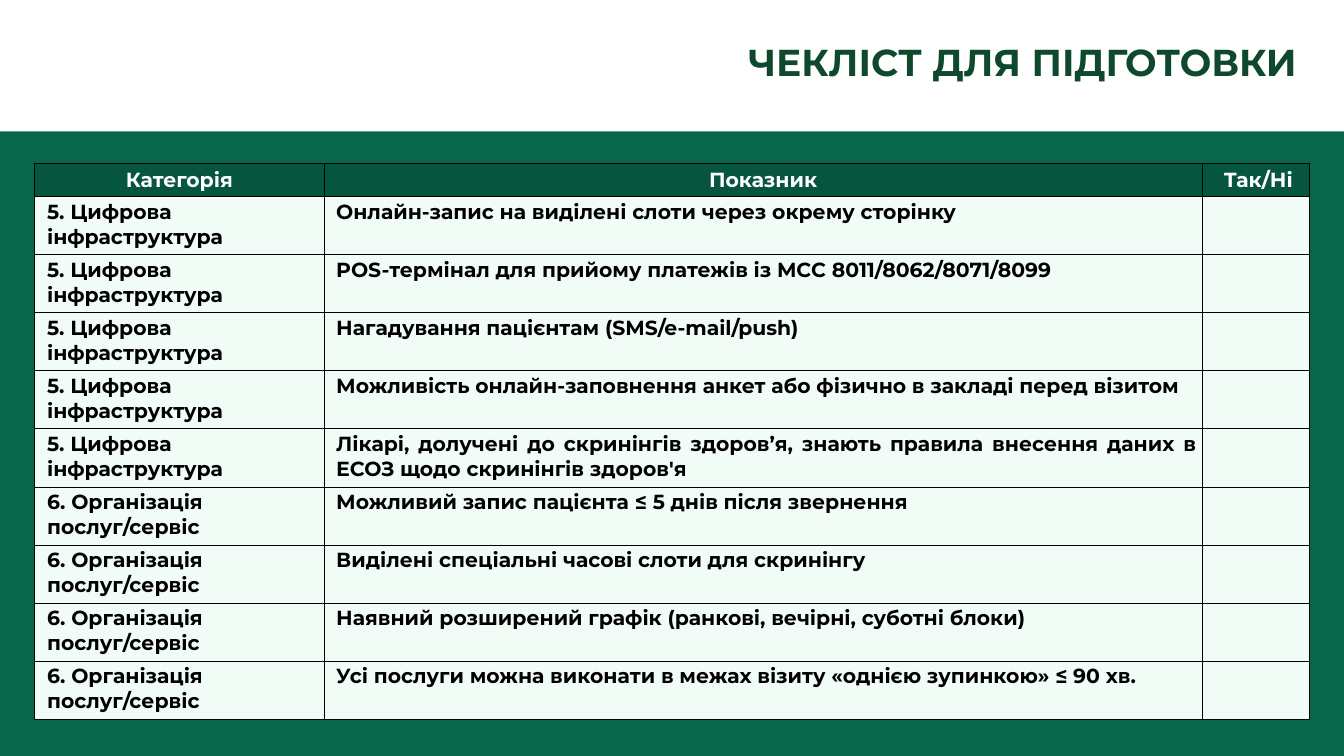
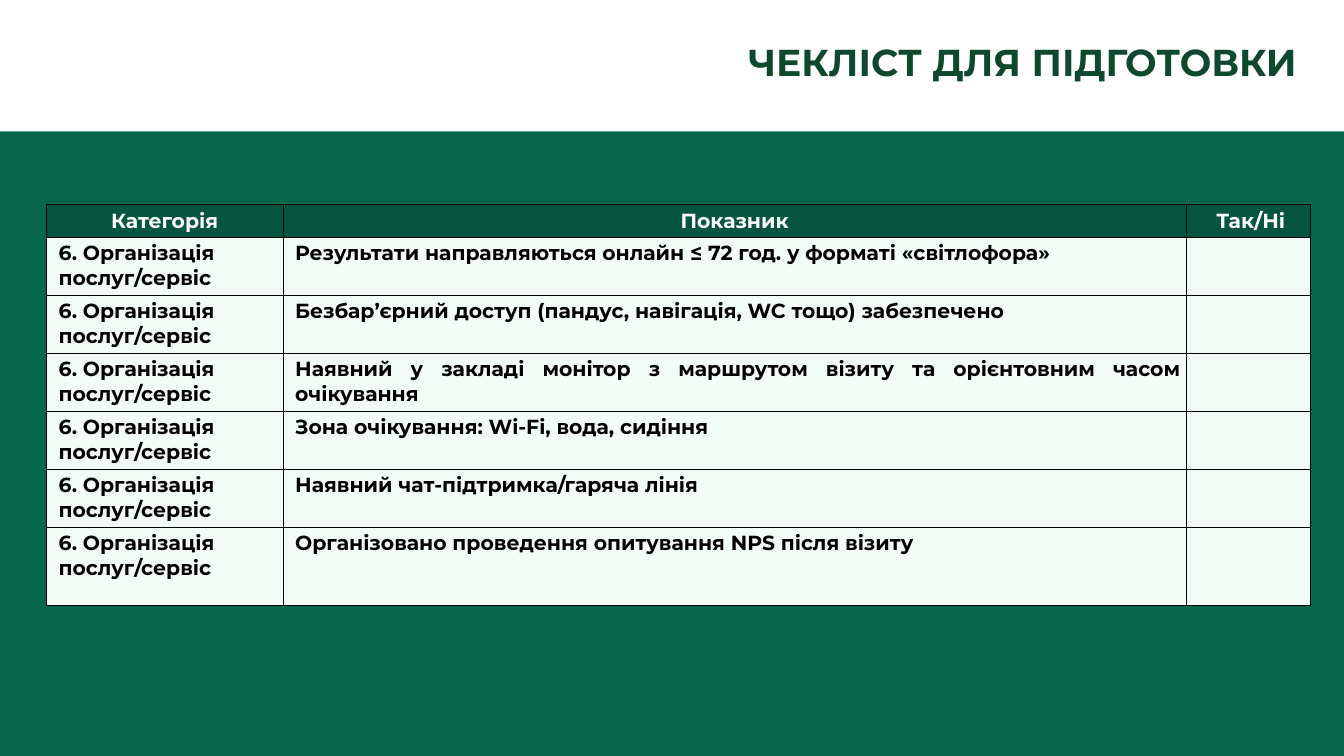
import pptx
import pptx.util
from lxml import etree
from pptx.dml.color import RGBColor
from pptx.enum.shapes import MSO_SHAPE
from pptx.enum.text import MSO_ANCHOR, PP_ALIGN
from pptx.oxml.ns import qn

Inches, Pt = pptx.util.Inches, pptx.util.Pt

# Content
TITLE = "ЧЕКЛІСТ ДЛЯ ПІДГОТОВКИ"
HEADINGS = ("Категорія", "Показник", "Так/Ні")
DIGITAL = "5. Цифрова інфраструктура"
SERVICE = "6. Організація послуг/сервіс"

CHECKLISTS = [
    {
        "left": 0.57, "top": 2.67, "columns": (4.73, 14.37, 1.76), "last_row": 0.95,
        "items": [
            (DIGITAL, "Онлайн-запис на виділені слоти через окрему сторінку"),
            (DIGITAL, "POS-термінал для прийому платежів із MCC 8011/8062/8071/8099"),
            (DIGITAL, "Нагадування пацієнтам (SMS/e-mail/push)"),
            (DIGITAL, "Можливість онлайн-заповнення анкет або фізично в закладі перед візитом"),
            (DIGITAL, "Лікарі, долучені до скринінгів здоров’я, знають правила внесення даних "
                      "в ЕСОЗ щодо скринінгів здоров'я"),
            (SERVICE, "Можливий запис пацієнта ≤ 5 днів після звернення"),
            (SERVICE, "Виділені спеціальні часові слоти для скринінгу"),
            (SERVICE, "Наявний розширений графік (ранкові, вечірні, суботні блоки)"),
            (SERVICE, "Усі послуги можна виконати в межах візиту «однією зупинкою» ≤ 90 хв."),
        ],
    },
    {
        "left": 0.76, "top": 3.34, "columns": (3.87, 14.78, 2.03), "last_row": 1.27,
        "items": [
            (SERVICE, "Результати направляються онлайн ≤ 72 год. у форматі «світлофора»"),
            (SERVICE, "Безбар’єрний доступ (пандус, навігація, WC тощо) забезпечено"),
            (SERVICE, "Наявний у закладі монітор з маршрутом візиту та орієнтовним часом очікування"),
            (SERVICE, "Зона очікування: Wi-Fi, вода, сидіння"),
            (SERVICE, "Наявний чат-підтримка/гаряча лінія"),
            (SERVICE, "Організовано проведення опитування NPS після візиту"),
        ],
    },
]

# Shared style
FONT = "Montserrat"
GREEN = RGBColor(0x08, 0x66, 0x4B)
HEADER_GREEN = RGBColor(0x06, 0x56, 0x3F)
TITLE_GREEN = RGBColor(0x0F, 0x49, 0x2D)
MINT = RGBColor(0xF2, 0xFC, 0xF7)
WHITE = RGBColor(0xFF, 0xFF, 0xFF)
BLACK = RGBColor(0, 0, 0)
SLIDE_W, SLIDE_H, BAND_H = 21.99, 12.37, 2.15
HEADER_ROW, ITEM_ROW = 0.54, 0.95
BODY_ALIGN = (PP_ALIGN.LEFT, PP_ALIGN.JUSTIFY, PP_ALIGN.LEFT)


def set_font(paragraph, size, color):
    font = paragraph.font
    font.name, font.size, font.bold = FONT, Pt(size), True
    font.color.rgb = color


def add_borders(cell):
    properties = cell._tc.get_or_add_tcPr()
    for side in ("a:lnL", "a:lnR", "a:lnT", "a:lnB"):
        line = etree.SubElement(properties, qn(side), w=str(Pt(1)))
        fill = etree.SubElement(line, qn("a:solidFill"))
        etree.SubElement(fill, qn("a:srgbClr"), val=str(BLACK))


def format_cell(cell, text, is_header, column):
    add_borders(cell)
    cell.fill.solid()
    cell.fill.fore_color.rgb = HEADER_GREEN if is_header else MINT
    side, vertical = (0.07, 0.07) if is_header else (0.1, 0.05)
    cell.margin_left = cell.margin_right = Inches(side)
    cell.margin_top = cell.margin_bottom = Inches(vertical)
    cell.text = text
    paragraph = cell.text_frame.paragraphs[0]
    paragraph.alignment = PP_ALIGN.CENTER if is_header else BODY_ALIGN[column]
    indents = paragraph._p.get_or_add_pPr()
    if not is_header:
        indents.set("marL", str(Inches(0.1)))
        indents.set("indent", "0")
    elif column == len(HEADINGS) - 1:
        indents.set("marL", "0")
        indents.set("indent", str(Inches(0.08)))
    set_font(paragraph, 24, WHITE if is_header else BLACK)


def add_title(slide):
    title = slide.shapes.title
    title.left, title.top = Inches(12.24), Inches(0.64)
    title.width, title.height = Inches(9.2), Inches(1.17)
    frame = title.text_frame
    frame.margin_left = frame.margin_right = frame.margin_top = frame.margin_bottom = 0
    frame.vertical_anchor = MSO_ANCHOR.TOP
    frame.word_wrap = True
    frame.text = TITLE
    frame.paragraphs[0].alignment = PP_ALIGN.LEFT
    set_font(frame.paragraphs[0], 44.1, TITLE_GREEN)


def add_checklist(slide, checklist):
    rows = [HEADINGS] + [(*item, "") for item in checklist["items"]]
    heights = [HEADER_ROW] + [ITEM_ROW] * (len(rows) - 2) + [checklist["last_row"]]
    widths = checklist["columns"]
    table = slide.shapes.add_table(
        len(rows), len(widths), Inches(checklist["left"]), Inches(checklist["top"]),
        Inches(sum(widths)), Inches(sum(heights))).table
    table.horz_banding = False
    for column, width in zip(table.columns, widths):
        column.width = Inches(width)
    for r, (texts, height) in enumerate(zip(rows, heights)):
        table.rows[r].height = Inches(height)
        for c, text in enumerate(texts):
            format_cell(table.cell(r, c), text, r == 0, c)


def add_layout_band(layout, slide):
    """Draw the white title band and place it at the back of the layout."""
    band = slide.shapes.add_shape(MSO_SHAPE.RECTANGLE, 0, 0, Inches(SLIDE_W), Inches(BAND_H))
    band.shadow.inherit = False
    band.fill.solid()
    band.fill.fore_color.rgb = WHITE
    band.line.fill.background()
    layout.shapes.element.insert(2, band.element)


def main():
    deck = pptx.Presentation()
    deck.slide_width, deck.slide_height = Inches(SLIDE_W), Inches(SLIDE_H)
    background = deck.slide_master.background.fill
    background.solid()
    background.fore_color.rgb = GREEN
    layout = deck.slide_layouts.get_by_name("Title Only")

    for number, checklist in enumerate(CHECKLISTS):
        slide = deck.slides.add_slide(layout)
        if number == 0:
            add_layout_band(layout, slide)
        add_title(slide)
        add_checklist(slide, checklist)
    deck.save("out.pptx")


if __name__ == "__main__":
    main()
